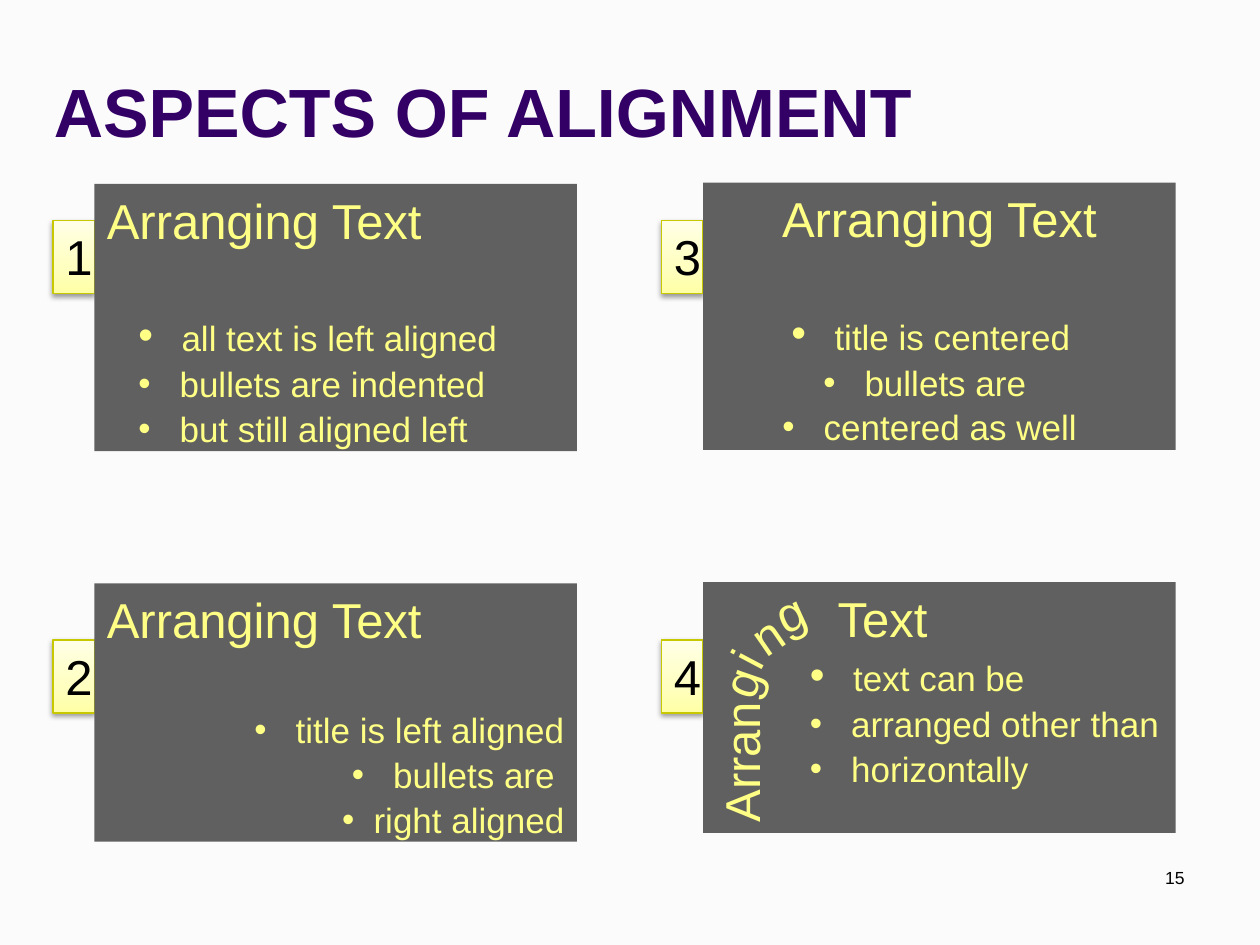
from copy import deepcopy
from dataclasses import dataclass

from lxml.etree import SubElement
from pptx import Presentation
from pptx.dml.color import RGBColor
from pptx.enum.shapes import MSO_SHAPE
from pptx.enum.text import MSO_ANCHOR, PP_ALIGN
from pptx.oxml.ns import qn
from pptx.util import Inches, Pt

LEFT, CENTER, RIGHT = PP_ALIGN.LEFT, PP_ALIGN.CENTER, PP_ALIGN.RIGHT


@dataclass(frozen=True)
class Theme:
    font: str = "Arial"
    background: str = "FBFBFB"
    heading: str = "330066"
    ink: str = "000000"
    card: str = "606060"
    card_text: str = "FFFF85"
    tag_line: str = "C8C800"
    tag_stops: tuple = ((0, "FFFFA5"), (0.35, "FFFFBF"), (1, "FFFFE7"))
    heading_size: int = 39
    title_size: int = 28
    lead_size: int = 24
    bullet_size: int = 20
    number_size: int = 10


def rgb(value):
    return RGBColor.from_string(value)


def write(para, text, *, font, size, color, bold=False, align=LEFT,
          margin=0, bullet=False, lead=None):
    """Fill a paragraph; lead is the size of a leading space, if it differs."""
    para.alignment = align
    props = para._p.get_or_add_pPr()
    props.set("marL", str(Inches(margin)))
    if bullet:
        props.set("indent", str(Inches(-0.25)))
        para.space_before = Pt(1.5)
        SubElement(props, qn("a:buFont"), typeface=font)
        SubElement(props, qn("a:buChar"), char="•")
    para.font.size = Pt(size)
    pieces = [(" ", lead), (text, size)] if lead else [(text, size)]
    for piece, points in pieces:
        if not piece:
            continue
        span = para.add_run()
        span.text = piece
        span.font.name, span.font.size, span.font.bold = font, Pt(points), bold
        span.font.color.rgb = rgb(color)


class SlideBuilder:
    def __init__(self, slide, theme):
        self.slide, self.theme = slide, theme
        slide.background.fill.solid()
        slide.background.fill.fore_color.rgb = rgb(theme.background)

    def rectangle(self, *place):
        box = self.slide.shapes.add_shape(MSO_SHAPE.RECTANGLE, *map(Inches, place))
        box.shadow.inherit = False
        box.text_frame.word_wrap = True
        box.text_frame.vertical_anchor = MSO_ANCHOR.TOP
        return box

    def label(self, text, place, size, color, rotation=0, anchor=MSO_ANCHOR.TOP, **style):
        box = self.slide.shapes.add_textbox(*map(Inches, place))
        box.rotation = rotation
        box.text_frame.word_wrap = True
        box.text_frame.vertical_anchor = anchor
        write(box.text_frame.paragraphs[0], text, font=self.theme.font,
              size=size, color=color, **style)

    def tag(self, number, left, top):
        theme = self.theme
        box = self.rectangle(left, top, 0.33, 0.58)
        box.line.color.rgb = rgb(theme.tag_line)
        box.line.width = Pt(0.75)
        # Three-stop gradient, rising from the bottom edge
        box.fill.gradient()
        box.fill.gradient_angle = 90
        stop_list = box._element.spPr.find(qn("a:gradFill")).find(qn("a:gsLst"))
        stop_list.insert(1, deepcopy(stop_list[0]))
        for stop, (position, color) in zip(box.fill.gradient_stops, theme.tag_stops):
            stop.position = position
            stop.color.rgb = rgb(color)
        # Soft shadow below
        effects = box._element.spPr.find(qn("a:effectLst"))
        shadow = SubElement(effects, qn("a:outerShdw"), blurRad=str(Pt(3.1)),
                            dist=str(Pt(1.6)), dir="5400000", rotWithShape="0")
        shade = SubElement(shadow, qn("a:srgbClr"), val=theme.ink)
        SubElement(shade, qn("a:alpha"), val="38000")
        write(box.text_frame.paragraphs[0], number, font=theme.font,
              size=theme.title_size, color=theme.ink)

    def card(self, place, title, bullets, *, title_align=LEFT, title_margin=0,
             align=LEFT, margin=0, large_lead=True, gap=True):
        theme = self.theme
        box = self.rectangle(*place)
        box.fill.solid()
        box.fill.fore_color.rgb = rgb(theme.card)
        box.line.fill.background()
        style = dict(font=theme.font, color=theme.card_text)
        heading = box.text_frame.paragraphs[0]
        write(heading, title, size=theme.title_size, align=title_align,
              margin=title_margin, **style)
        if gap:
            heading.space_after = Pt(33)
        for index, text in enumerate(bullets):
            lead = theme.lead_size if large_lead and index == 0 else None
            write(box.text_frame.add_paragraph(), text, size=theme.bullet_size,
                  align=align, margin=margin, bullet=True, lead=lead, **style)


def main():
    theme = Theme()
    deck = Presentation()
    deck.slide_width, deck.slide_height = Inches(10), Inches(7.5)
    page = SlideBuilder(deck.slides.add_slide(deck.slide_layouts[6]), theme)

    # Heading
    page.label("ASPECTS OF ALIGNMENT", (0.33, 0.17, 9.5, 1.08), theme.heading_size,
               theme.heading, bold=True, anchor=MSO_ANCHOR.BOTTOM)

    # Number tags, counted down each column
    columns, rows = (0.42, 5.25), (1.75, 5.08)
    for index in range(4):
        page.tag(str(index + 1), columns[index // 2], rows[index % 2])

    # Example cards
    page.card((0.75, 1.46, 3.83, 2.12), "Arranging Text",
              ["all text is left aligned", " bullets are indented",
               " but still aligned left"], margin=0.5)
    page.card((0.75, 4.63, 3.83, 2.05), "Arranging Text",
              [" title is left aligned", " bullets are ", "right aligned"],
              align=RIGHT, margin=1, large_lead=False)
    page.card((5.58, 1.45, 3.75, 2.12), "Arranging Text",
              ["title is centered", " bullets are ", " centered as well"],
              title_align=CENTER, align=CENTER)
    page.card((5.58, 4.62, 3.75, 1.99), "Text",
              ["text can be", " arranged other than", " horizontally"],
              title_margin=0.97, margin=1, gap=False)

    # Word bent along a curve
    curve = [("Arran", 5.17, 5.63, 1.42, 270), ("g", 5.63, 5.07, 0.54, 289),
             ("i", 5.71, 4.83, 0.54, 297.9), ("n", 5.87, 4.74, 0.47, 325.3),
             ("g", 6.06, 4.55, 0.52, 335.7)]
    for text, left, top, width, rotation in curve:
        page.label(text, (left, top, width, 0.57), theme.title_size,
                   theme.card_text, rotation=rotation)

    # Slide number
    page.label("15", (7.17, 6.83, 2.33, 0.5), theme.number_size, theme.ink, align=RIGHT)

    deck.save("out.pptx")


if __name__ == "__main__":
    main()
